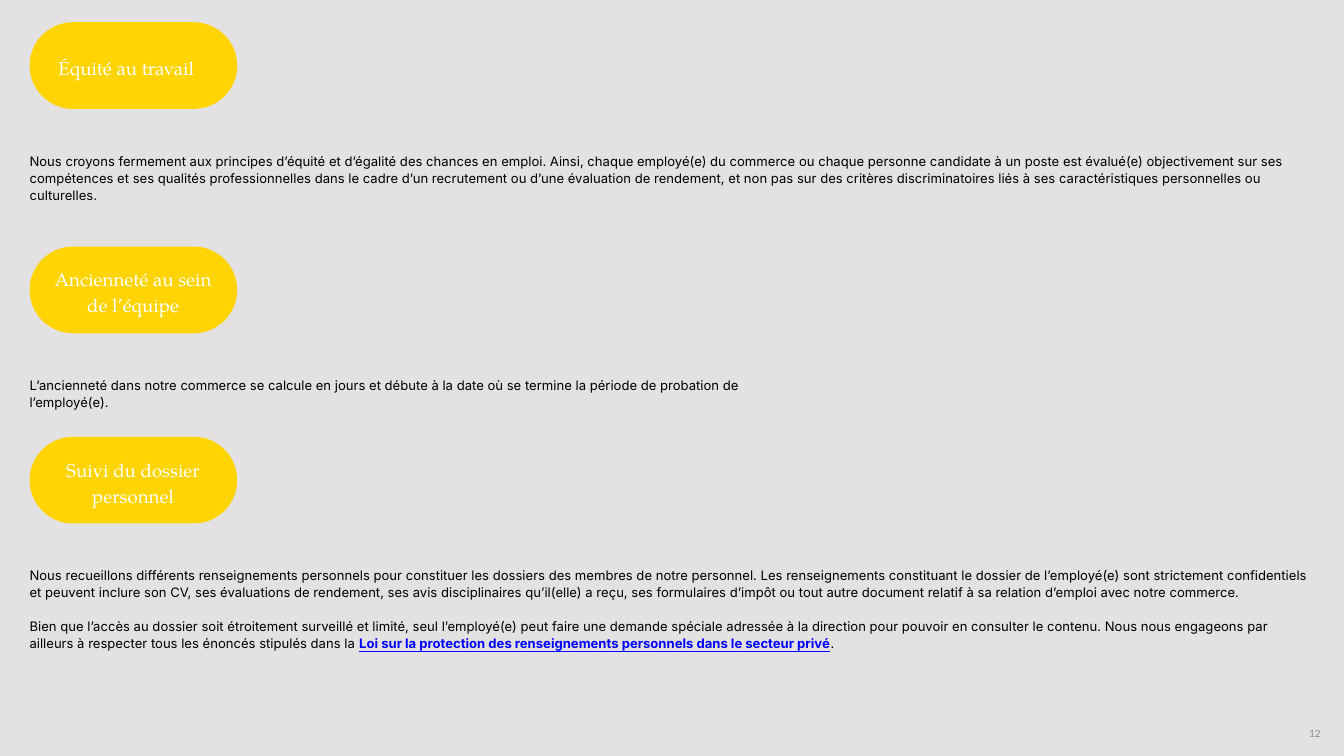
"""Build the slide on workplace equity, seniority and personnel files."""
from pptx import Presentation
from pptx.dml.color import RGBColor
from pptx.enum.shapes import MSO_SHAPE
from pptx.enum.text import MSO_ANCHOR, PP_ALIGN
from pptx.util import Pt

PILL = MSO_SHAPE.ROUNDED_RECTANGLE
LEFT, CENTER, RIGHT = PP_ALIGN.LEFT, PP_ALIGN.CENTER, PP_ALIGN.RIGHT
TOP, MIDDLE = MSO_ANCHOR.TOP, MSO_ANCHOR.MIDDLE

BACKGROUND = RGBColor(0xE3, 0xE1, 0xE1)
YELLOW = RGBColor(0xFF, 0xD4, 0x00)
WHITE = RGBColor(0xFF, 0xFF, 0xFF)
BLACK = RGBColor(0x00, 0x00, 0x00)
BLUE = RGBColor(0x00, 0x00, 0xFF)
GRAY = RGBColor(0x8C, 0x8C, 0x8C)

MARGIN = 31.7
PILL_W, PILL_H = 222.5, 92.9
BODY_OFFSET = 139
BODY_LINE = 18.2
FULL_W = 1377.4

EQUITY = (
    "Nous croyons fermement aux principes d’équité et d’égalité des chances en emploi. "
    "Ainsi, chaque employé(e) du commerce ou chaque personne candidate à un poste est "
    "évalué(e) objectivement sur ses compétences et ses qualités professionnelles dans le "
    "cadre d’un recrutement ou d’une évaluation de rendement, et non pas sur des critères "
    "discriminatoires liés à ses caractéristiques personnelles ou culturelles."
)
SENIORITY = (
    "L’ancienneté dans notre commerce se calcule en jours et débute à la date où se termine "
    "la période de probation de l’employé(e)."
)
FILE_CONTENT = (
    "Nous recueillons différents renseignements personnels pour constituer les dossiers des "
    "membres de notre personnel. Les renseignements constituant le dossier de l’employé(e) "
    "sont strictement confidentiels et peuvent inclure son CV, ses évaluations de rendement, "
    "ses avis disciplinaires qu’il(elle) a reçu, ses formulaires d’impôt ou tout autre "
    "document relatif à sa relation d’emploi avec notre commerce."
)
FILE_ACCESS = (
    "Bien que l’accès au dossier soit étroitement surveillé et limité, seul l’employé(e) peut "
    "faire une demande spéciale adressée à la direction pour pouvoir en consulter le contenu. "
    "Nous nous engageons par ailleurs à respecter tous les énoncés stipulés dans la "
)
LAW = "Loi sur la protection des renseignements personnels dans le secteur privé"

# (pill top, title, title left, title offset, title width, title height, alignment, body width, body height, body)
SECTIONS = [
    (23.8, "Équité au travail", 62.6, 33, 161.3, 25.9, LEFT, FULL_W, 53.3, [[EQUITY]]),
    (264.2, "Ancienneté au sein de l’équipe", 49, 19, 187.2, 54, CENTER, 847.4, 17.3,
     [[SENIORITY]]),
    (468, "Suivi du dossier personnel", 49, 19.4, 187.2, 54, CENTER, FULL_W, 90,
     [[FILE_CONTENT], [FILE_ACCESS, LAW, "."]]),
]


class Deck:
    """Holds the text style and the current slide."""

    def __init__(self, prs):
        self.s = prs.slides.add_slide(prs.slide_layouts[6])
        self.s.background.fill.solid()
        self.s.background.fill.fore_color.rgb = BACKGROUND

    def pill(self, x, y, w, h):
        sp = self.s.shapes.add_shape(PILL, Pt(x), Pt(y), Pt(w), Pt(h))
        sp.adjustments[0] = 0.5
        sp.shadow.inherit = False
        sp.fill.solid()
        sp.fill.fore_color.rgb = YELLOW
        sp.line.fill.background()

    def text(self, x, y, w, h, paragraphs, font, size, color,
             align=LEFT, line=None, anchor=TOP, inset=0):
        tf = self.s.shapes.add_textbox(Pt(x), Pt(y), Pt(w), Pt(h)).text_frame
        tf.word_wrap = True
        tf.vertical_anchor = anchor
        tf.margin_left = tf.margin_right = Pt(inset)
        tf.margin_top = tf.margin_bottom = Pt(0)
        for i, runs in enumerate(paragraphs):
            p = tf.add_paragraph() if i else tf.paragraphs[0]
            p.alignment = align
            if line:
                p.line_spacing = Pt(line)
                if i:
                    p.space_before = Pt(line)
            for words in runs:
                r = p.add_run()
                r.text = words
                r.font.name = font
                r.font.size = Pt(size)
                r.font.color.rgb = color
                if words == LAW:
                    r.font.bold = r.font.underline = True
                    r.font.color.rgb = BLUE

    def title(self, x, y, w, h, words, align):
        self.text(x, y, w, h, [[words]], "TeX Gyre Pagella", 20, WHITE, align, 28)

    def body(self, x, y, w, h, paragraphs):
        self.text(x, y, w, h, paragraphs, "Inter", 14, BLACK, line=BODY_LINE)

    def page_number(self, x, y, w, h, number):
        self.text(x, y, w, h, [[number]], "Calibri", 12, GRAY, RIGHT, anchor=MIDDLE, inset=7.2)


def main():
    prs = Presentation()
    prs.slide_width, prs.slide_height = Pt(1440), Pt(810)
    deck = Deck(prs)
    for top, title, x, dy, w, h, align, body_w, body_h, body in SECTIONS:
        deck.pill(MARGIN, top, PILL_W, PILL_H)
        deck.title(x, top + dy, w, h, title, align)
        deck.body(MARGIN, top + BODY_OFFSET, body_w, body_h, body)
    deck.page_number(1254.2, 771.1, 167.8, 28.8, "12")
    prs.save("out.pptx")


if __name__ == "__main__":
    main()
